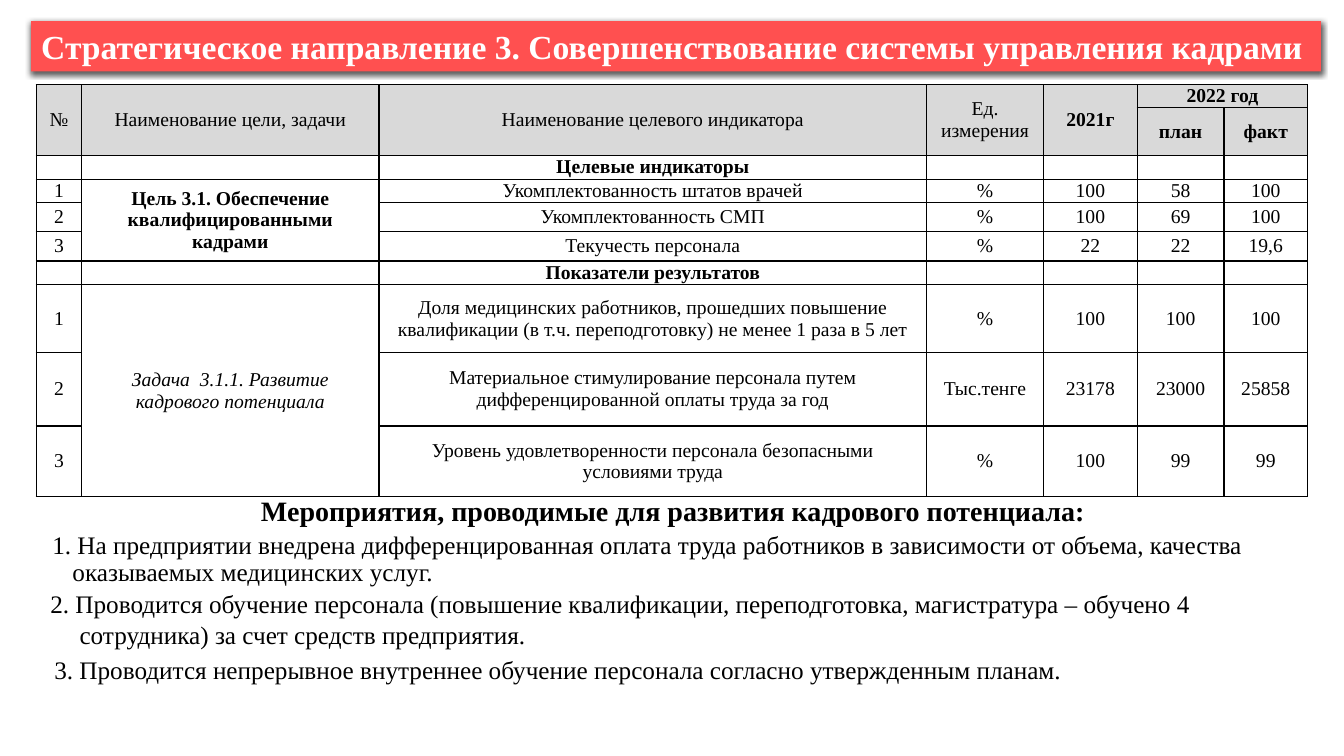
from dataclasses import dataclass

from lxml import etree
from pptx import Presentation
from pptx.dml.color import RGBColor
from pptx.enum.shapes import MSO_SHAPE
from pptx.enum.text import MSO_ANCHOR, PP_ALIGN
from pptx.oxml.ns import qn
from pptx.util import Inches, Pt

RECTANGLE = MSO_SHAPE.RECTANGLE
TOP, MIDDLE = MSO_ANCHOR.TOP, MSO_ANCHOR.MIDDLE
LEFT, CENTER = PP_ALIGN.LEFT, PP_ALIGN.CENTER


@dataclass(frozen=True)
class Theme:
    """Colours, font and type sizes of the slide."""
    font: str = "Times New Roman"
    black: str = "000000"
    white: str = "FFFFFF"
    banner: str = "FF5050"
    header: str = "D9D9D9"
    title_size: int = 24
    heading_size: int = 20
    body_size: int = 18
    table_size: int = 14
    border_width: int = 1


THEME = Theme()

COLUMN_WIDTHS = [0.45, 2.95, 5.43, 1.16, 0.93, 0.86, 0.83]
ROW_HEIGHTS = [0.23, 0.47, 0.24, 0.23, 0.29, 0.29, 0.23, 0.67, 0.73, 0.7]
HEADER_ROWS = 2
TABLE_ROWS = [
    ["№", "Наименование цели, задачи", "Наименование целевого индикатора",
     "Ед. измерения", "2021г", "2022 год", ""],
    ["", "", "", "", "", "план", "факт"],
    ["", "", "Целевые индикаторы", "", "", "", ""],
    ["1", "Цель 3.1. Обеспечение квалифицированными кадрами",
     "Укомплектованность штатов врачей", "%", "100", "58", "100"],
    ["2", "", "Укомплектованность СМП", "%", "100", "69", "100"],
    ["3", "", "Текучесть персонала", "%", "22", "22", "19,6"],
    ["", "", "Показатели результатов", "", "", "", ""],
    ["1", "Задача  3.1.1. Развитие кадрового потенциала",
     "Доля медицинских работников, прошедших повышение квалификации "
     "(в т.ч. переподготовку) не менее 1 раза в 5 лет", "%", "100", "100", "100"],
    ["2", "", "Материальное стимулирование персонала путем "
     "дифференцированной оплаты труда за год", "Тыс.тенге", "23178", "23000", "25858"],
    ["3", "", "Уровень удовлетворенности персонала безопасными условиями труда",
     "%", "100", "99", "99"],
]
MERGES = [((0, column), (1, column)) for column in range(5)]
MERGES += [((0, 5), (0, 6)), ((3, 1), (5, 1)), ((7, 1), (9, 1))]
BOLD_CELLS = {(0, 4), (0, 5), (1, 5), (1, 6), (2, 2), (3, 1), (6, 2)}
ITALIC_CELLS = {(7, 1)}
INDENTED_CELLS = {(3, 1): -0.07}


def write_text(frame, text, size, color=THEME.black, bold=False, italic=False,
               align=LEFT, margin=0, indent=0, spacing=None):
    """Write one formatted paragraph into a text frame."""
    frame.word_wrap = True
    paragraph = frame.paragraphs[0]
    paragraph.alignment = align
    if spacing:
        paragraph.line_spacing = spacing
    if margin or indent:
        properties = paragraph._p.get_or_add_pPr()
        properties.set("marL", str(Inches(margin)))
        properties.set("indent", str(Inches(indent)))
    if not text:
        etree.SubElement(paragraph._p, qn("a:endParaRPr"), sz=str(size * 100))
        return
    run = paragraph.add_run()
    run.text = text
    run.font.name = THEME.font
    run.font.size = Pt(size)
    run.font.bold = bold
    run.font.italic = italic
    run.font.color.rgb = RGBColor.from_string(color)


def add_shadow(shape):
    """Give a shape a soft black shadow falling downwards."""
    effects = etree.SubElement(shape._element.spPr, qn("a:effectLst"))
    shadow = etree.SubElement(effects, qn("a:outerShdw"), blurRad=str(Pt(4.5)),
                              dist=str(Pt(1.5)), dir="5400000", rotWithShape="0")
    color = etree.SubElement(shadow, qn("a:srgbClr"), val=THEME.black)
    etree.SubElement(color, qn("a:alpha"), val="63000")


def add_banner(slide, text, left, top, width, height):
    """Add the coloured title banner."""
    shape = slide.shapes.add_shape(RECTANGLE, Inches(left), Inches(top),
                                   Inches(width), Inches(height))
    shape.fill.solid()
    shape.fill.fore_color.rgb = RGBColor.from_string(THEME.banner)
    shape.line.fill.background()
    add_shadow(shape)
    shape.text_frame.vertical_anchor = TOP
    write_text(shape.text_frame, text, THEME.title_size, color=THEME.white, bold=True)


def add_text(slide, text, left, top, width, height, size=THEME.body_size,
             anchor=TOP, **text_format):
    """Add a text box with one paragraph."""
    box = slide.shapes.add_textbox(Inches(left), Inches(top), Inches(width), Inches(height))
    box.text_frame.vertical_anchor = anchor
    write_text(box.text_frame, text, size, **text_format)


def set_borders(cell):
    """Draw a thin black line on all sides of a cell."""
    properties = cell._tc.get_or_add_tcPr()
    for side in ("a:lnL", "a:lnR", "a:lnT", "a:lnB"):
        line = etree.SubElement(properties, qn(side), w=str(Pt(THEME.border_width)))
        fill = etree.SubElement(line, qn("a:solidFill"))
        etree.SubElement(fill, qn("a:srgbClr"), val=THEME.black)


def format_cell(cell, is_header):
    """Set the borders, fill and margins of a cell."""
    set_borders(cell)
    if is_header:
        cell.fill.solid()
        cell.fill.fore_color.rgb = RGBColor.from_string(THEME.header)
    else:
        cell.fill.background()
    cell.vertical_anchor = MIDDLE
    cell.margin_left = cell.margin_right = Inches(0.06)
    cell.margin_top = cell.margin_bottom = 0


def add_indicator_table(slide, left, top):
    """Add the table of goals, tasks and indicators."""
    table = slide.shapes.add_table(
        len(ROW_HEIGHTS), len(COLUMN_WIDTHS), Inches(left), Inches(top),
        Inches(sum(COLUMN_WIDTHS)), Inches(sum(ROW_HEIGHTS))).table
    table.first_row = table.horz_banding = False
    for column, width in zip(table.columns, COLUMN_WIDTHS):
        column.width = Inches(width)
    for row, height in zip(table.rows, ROW_HEIGHTS):
        row.height = Inches(height)
    for row_index, texts in enumerate(TABLE_ROWS):
        for column_index, text in enumerate(texts):
            position = (row_index, column_index)
            cell = table.cell(*position)
            format_cell(cell, row_index < HEADER_ROWS)
            write_text(cell.text_frame, text, THEME.table_size, align=CENTER,
                       bold=position in BOLD_CELLS, italic=position in ITALIC_CELLS,
                       indent=INDENTED_CELLS.get(position, 0))
    for first, last in MERGES:
        table.cell(*first).merge(table.cell(*last))


def main():
    """Build the slide and save it."""
    presentation = Presentation()
    presentation.slide_width = Inches(13.33)
    presentation.slide_height = Inches(7.5)
    slide = presentation.slides.add_slide(presentation.slide_layouts[6])
    add_banner(slide, "Стратегическое направление 3. Совершенствование системы "
               "управления кадрами", 0.31, 0.21, 12.79, 0.5)
    add_indicator_table(slide, 0.36, 0.84)
    add_text(slide, "Мероприятия, проводимые для развития кадрового потенциала:",
             2.49, 4.85, 8.38, 0.44, size=THEME.heading_size, bold=True)
    add_text(slide, "1. На предприятии внедрена дифференцированная оплата труда работников "
             "в зависимости от объема, качества оказываемых медицинских услуг.",
             0.42, 5.27, 12.69, 0.57, anchor=MIDDLE, margin=0.2, indent=-0.2, spacing=0.9)
    add_text(slide, "2. Проводится обучение персонала (повышение квалификации, переподготовка, "
             "магистратура – обучено 4 сотрудника) за счет средств предприятия.",
             0.4, 5.79, 12.75, 0.71, margin=0.29, indent=-0.29)
    add_text(slide, "3. Проводится непрерывное внутреннее обучение персонала согласно "
             "утвержденным планам.", 0.44, 6.44, 12.73, 0.4)
    presentation.save("out.pptx")


if __name__ == "__main__":
    main()
